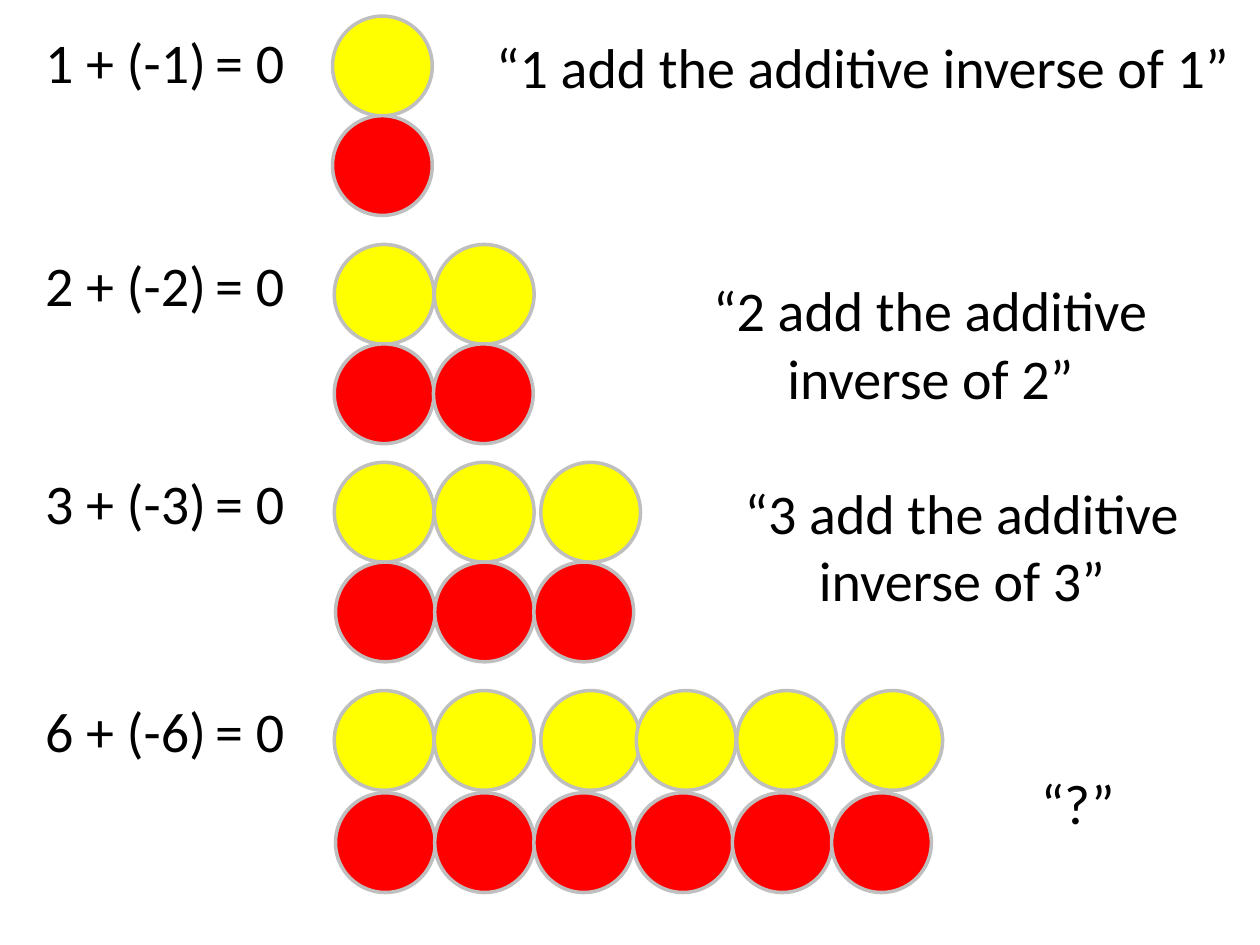
from pptx import Presentation
from pptx.dml.color import RGBColor
from pptx.enum.shapes import MSO_SHAPE as Shape
from pptx.enum.text import MSO_AUTO_SIZE as AutoSize, PP_ALIGN as Align
from pptx.util import Pt

BLACK = RGBColor(0x00, 0x00, 0x00)
WHITE = RGBColor(0xFF, 0xFF, 0xFF)
YELLOW = RGBColor(0xFF, 0xFF, 0x00)
RED = RGBColor(0xFF, 0x00, 0x00)
GREY = RGBColor(0xBF, 0xBF, 0xBF)

DIAMETER = 57
YELLOW_OFFSETS = (0, 57.2, 118, 172.6, 230, 290.6)
RED_PITCH = 56.7
LINE_HEIGHT = 46
TWO_LINES = 85

# number, text top, yellow left, yellow top, red left, red top
ROWS = (
    (1, 12.2, 190, 9.2, 190, 66.1),
    (2, 139.7, 191, 139.7, 191, 196.5),
    (3, 264.2, 191, 264.2, 191.7, 321.2),
    (6, 394.6, 191, 394.6, 191.7, 453),
)

# text, left, top, width, height, alignment
PHRASES = (
    ("“1 add the additive inverse of 1”", 276.5, 15.1, 434.2, LINE_HEIGHT, Align.LEFT),
    ("“2 add the additive inverse of 2”", 360, 154.1, 343.4, TWO_LINES, Align.CENTER),
    ("“3 add the additive inverse of 3”", 378, 270, 343.4, TWO_LINES, Align.CENTER),
    ("“?”", 444.2, 435.6, 343.4, LINE_HEIGHT, Align.CENTER),
)


def add_text(slide, text, left, top, width, height=LINE_HEIGHT, *,
             align=Align.LEFT, size=32, font="Calibri", color=BLACK):
    box = slide.shapes.add_textbox(Pt(left), Pt(top), Pt(width), Pt(height))
    frame = box.text_frame
    frame.word_wrap = True
    frame.auto_size = AutoSize.SHAPE_TO_FIT_TEXT
    paragraph = frame.paragraphs[0]
    paragraph.alignment = align
    run = paragraph.add_run()
    run.text = text
    run.font.size = Pt(size)
    run.font.name = font
    run.font.color.rgb = color


def add_counter(shapes, left, top, color):
    counter = shapes.add_shape(Shape.OVAL, Pt(left), Pt(top), Pt(DIAMETER), Pt(DIAMETER))
    counter.shadow.inherit = False
    counter.fill.solid()
    counter.fill.fore_color.rgb = color
    counter.line.color.rgb = GREY
    counter.line.width = Pt(2)


def add_zero_pairs(slide, count, yellow_left, yellow_top, red_left, red_top):
    """Draw count yellow counters above count red ones, grouped when several."""
    shapes = slide.shapes if count == 1 else slide.shapes.add_group_shape().shapes
    for index, offset in enumerate(YELLOW_OFFSETS[:count]):
        add_counter(shapes, yellow_left + offset, yellow_top, YELLOW)
        add_counter(shapes, red_left + index * RED_PITCH, red_top, RED)


def add_equation(slide, number, top):
    add_text(slide, f"{number} + (-{number})", 18.7, top, 118.8)
    add_text(slide, "= 0", 115.9, top, 118.8)


def main():
    presentation = Presentation()
    presentation.slide_width = Pt(720)
    presentation.slide_height = Pt(540)
    slide = presentation.slides.add_slide(presentation.slide_layouts[6])
    slide.background.fill.solid()
    slide.background.fill.fore_color.rgb = WHITE

    for number, text_top, *counter_places in ROWS:
        add_equation(slide, number, text_top)
        add_zero_pairs(slide, number, *counter_places)
    for text, left, top, width, height, align in PHRASES:
        add_text(slide, text, left, top, width, height, align=align)

    presentation.save("out.pptx")


if __name__ == "__main__":
    main()
